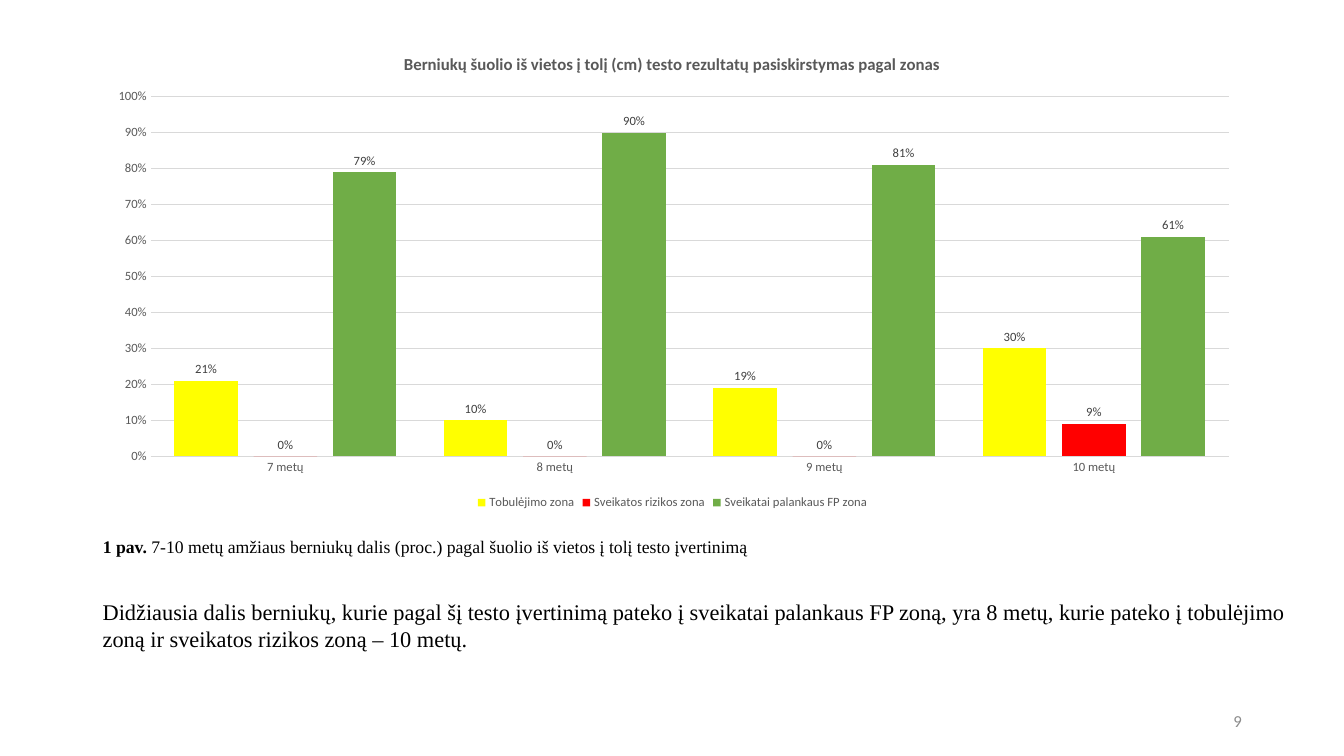
from lxml import etree
from pptx import Presentation
from pptx.chart import data
from pptx.dml.color import RGBColor
from pptx.enum import chart as ch, text as tx
from pptx.oxml import ns
from pptx.util import Pt

COLORS = {
    "black": "000000", "axis": "595959", "grid": "D9D9D9", "label": "404040",
    "number": "8C8C8C", "yellow": "FFFF00", "red": "FF0000", "green": "70AD47",
}
AGES = ["7 metų", "8 metų", "9 metų", "10 metų"]
ZONES = [
    ("Tobulėjimo zona", (0.21, 0.1, 0.19, 0.3), "yellow"),
    ("Sveikatos rizikos zona", (0, 0, 0, 0.09), "red"),
    ("Sveikatai palankaus FP zona", (0.79, 0.9, 0.81, 0.61), "green"),
]
CHART_TITLE = "Berniukų šuolio iš vietos į tolį (cm) testo rezultatų pasiskirstymas pagal zonas"
CAPTION = "7-10 metų amžiaus berniukų dalis (proc.) pagal šuolio iš vietos į tolį testo įvertinimą"
CONCLUSION = (
    "Didžiausia dalis berniukų, kurie pagal šį testo įvertinimą pateko į sveikatai "
    "palankaus FP zoną, yra 8 metų, kurie pateko į tobulėjimo zoną ir sveikatos "
    "rizikos zoną – 10 metų."
)


def color(name):
    """Return the named palette colour."""
    return RGBColor.from_string(COLORS[name])


def set_font(font, size, color_name, name="Calibri", bold=False):
    """Format a font."""
    font.size, font.name, font.bold = Pt(size), name, bold
    font.color.rgb = color(color_name)


def add_text(paragraph, text, **style):
    """Append a formatted run to a paragraph."""
    run = paragraph.add_run()
    run.text = text
    set_font(run.font, **style)


def place(shape, box):
    """Move a shape to a box given in points."""
    shape.left, shape.top, shape.width, shape.height = map(Pt, box)


def add_text_box(slide, box, text, anchor=tx.MSO_ANCHOR.TOP, align=tx.PP_ALIGN.LEFT, **style):
    """Add a wrapped text box with one paragraph."""
    frame = slide.shapes.add_textbox(*map(Pt, box)).text_frame
    frame.word_wrap = True
    frame.vertical_anchor = anchor
    frame.paragraphs[0].alignment = align
    add_text(frame.paragraphs[0], text, **style)


def add_caption(slide, box):
    """Place the figure caption in the title placeholder."""
    title = slide.shapes.title
    place(title, box)
    frame = title.text_frame
    frame.vertical_anchor = tx.MSO_ANCHOR.MIDDLE
    frame.auto_size = tx.MSO_AUTO_SIZE.NONE
    paragraph = frame.paragraphs[0]
    paragraph.alignment = tx.PP_ALIGN.LEFT
    paragraph.line_spacing = 0.9
    style = {"size": 12.6, "color_name": "black", "name": "Times New Roman"}
    add_text(paragraph, "1 pav. ", bold=True, **style)
    add_text(paragraph, CAPTION, **style)


def set_plot_layout(chart, **fractions):
    """Fix the inner plot area as fractions of the chart."""
    area = chart._chartSpace.chart.plotArea
    for old in area.findall(ns.qn("c:layout")):
        area.remove(old)
    layout = etree.Element(ns.qn("c:layout"))
    manual = etree.SubElement(layout, ns.qn("c:manualLayout"))
    settings = {"layoutTarget": "inner", "xMode": "edge", "yMode": "edge", **fractions}
    for tag, value in settings.items():
        etree.SubElement(manual, ns.qn(f"c:{tag}")).set("val", str(value))
    area.insert(0, layout)


def format_axes(chart):
    """Format both axes and the gridlines."""
    for axis in (chart.category_axis, chart.value_axis):
        axis.major_tick_mark = axis.minor_tick_mark = ch.XL_TICK_MARK.NONE
        set_font(axis.tick_labels.font, 9, "axis")
    values = chart.value_axis
    values.minimum_scale, values.maximum_scale, values.major_unit = 0, 1, 0.1
    values.tick_labels.number_format = "0%"
    values.tick_labels.number_format_is_linked = False
    values.format.line.fill.background()
    for line in (chart.category_axis.format.line, values.major_gridlines.format.line):
        line.color.rgb = color("grid")
        line.width = Pt(0.75)


def add_zone_chart(slide, box):
    """Add the clustered column chart of zones by age."""
    chart_data = data.CategoryChartData(number_format="0%")
    chart_data.categories = AGES
    for name, values, _ in ZONES:
        chart_data.add_series(name, values)
    chart = slide.shapes.add_chart(
        ch.XL_CHART_TYPE.COLUMN_CLUSTERED, *map(Pt, box), chart_data).chart
    set_font(chart.font, 10, "black")
    add_text(chart.chart_title.text_frame.paragraphs[0], CHART_TITLE,
             size=12, color_name="axis", bold=True)
    chart.has_legend = True
    chart.legend.position = ch.XL_LEGEND_POSITION.BOTTOM
    chart.legend.include_in_layout = False
    set_font(chart.legend.font, 9, "axis")
    format_axes(chart)
    plot = chart.plots[0]
    plot.gap_width, plot.overlap, plot.vary_by_categories = 75, -25, False
    for series, (_, _, fill) in zip(plot.series, ZONES):
        series.format.fill.solid()
        series.format.fill.fore_color.rgb = color(fill)
        series.invert_if_negative = False
        labels = series.data_labels
        labels.show_value = True
        labels.position = ch.XL_LABEL_POSITION.OUTSIDE_END
        labels.number_format, labels.number_format_is_linked = "0%", False
        set_font(labels.font, 9, "label")
    set_plot_layout(chart, x=0.05, y=0.13, w=0.93, h=0.75)


def build_slide(presentation):
    """Build the chart slide with its caption and conclusion."""
    slide = presentation.slides.add_slide(presentation.slide_layouts[5])
    left, width = 66.24, 828
    add_caption(slide, (left, 383, width, 17.3))
    add_zone_chart(slide, (left, 24.5, width, 342.7))
    add_text_box(slide, (678.24, 500.4, 216, 28.8), "9", anchor=tx.MSO_ANCHOR.MIDDLE,
                 align=tx.PP_ALIGN.RIGHT, size=12, color_name="number")
    add_text_box(slide, (left, 424, 862.5, 46), CONCLUSION,
                 size=16, color_name="black", name="Times New Roman")


def main():
    """Create and save the presentation."""
    presentation = Presentation()
    presentation.slide_width, presentation.slide_height = Pt(960), Pt(540)
    build_slide(presentation)
    presentation.save("out.pptx")


if __name__ == "__main__":
    main()
